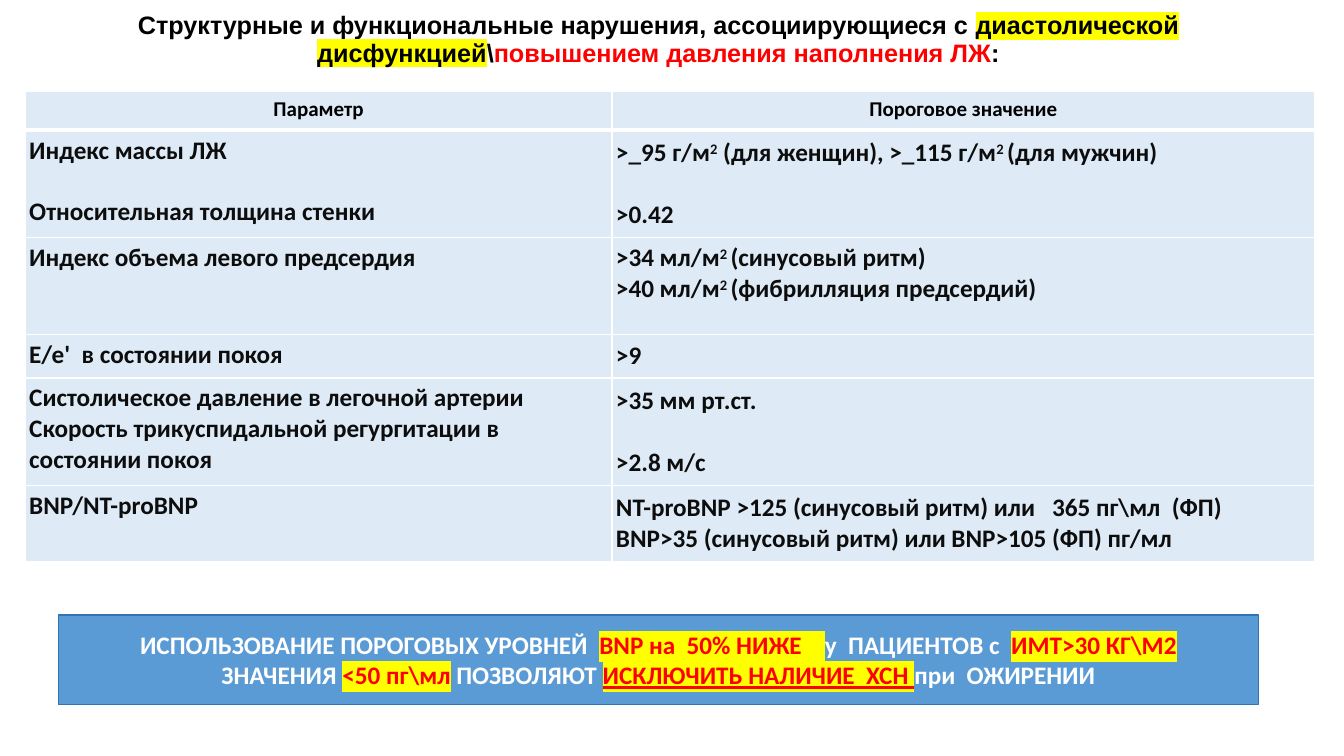
from lxml import etree
from pptx import Presentation
from pptx.dml.color import RGBColor
from pptx.enum.shapes import MSO_SHAPE
from pptx.enum.text import MSO_ANCHOR, PP_ALIGN
from pptx.oxml.ns import qn
from pptx.util import Inches, Pt

RECT = MSO_SHAPE.RECTANGLE
TOP, MID = MSO_ANCHOR.TOP, MSO_ANCHOR.MIDDLE
LEFT, CENTER = PP_ALIGN.LEFT, PP_ALIGN.CENTER
RED, WHITE, YELLOW = "FF0000", "FFFFFF", "FFFF00"
SUP = {"base": 30}
MARK = {"mark": YELLOW}
HOT = {"color": RED, "mark": YELLOW}


def tint(fill, color):
    fill.solid()
    fill.fore_color.rgb = RGBColor.from_string(color)


def write(para, text, size=18, face="Calibri", color="0D0D0D", mark=None, base=0, under=False):
    run = para.add_run()
    run.text = text
    font = run.font
    font.size, font.bold, font.name = Pt(size), True, face
    tint(font.fill, color)
    props = run._r.get_or_add_rPr()
    if under:
        font.underline = True
    if base:
        props.set("baseline", str(base * 1000))
    if mark:
        light = etree.Element(qn("a:highlight"))
        etree.SubElement(light, qn("a:srgbClr"), val=mark)
        props.find(qn("a:solidFill")).addnext(light)


deck = Presentation()
deck.slide_width, deck.slide_height = Inches(13.33), Inches(7.5)
slide = deck.slides.add_slide(deck.slide_layouts[6])

title = slide.shapes.add_textbox(Inches(0.78), Inches(0.11), Inches(11.5), Inches(0.8))
frame = title.text_frame
frame.word_wrap = True
frame.margin_top = Inches(0.02)
frame.vertical_anchor = TOP
para = frame.paragraphs[0]
para.alignment = CENTER
para.line_spacing = 0.9
for text, look in [
    ("Структурные и функциональные нарушения, ассоциирующиеся с ", {}),
    ("диастолической дисфункцией", MARK),
    ("\\", {}),
    ("повышением давления наполнения ЛЖ", {"color": RED}),
    (":", {}),
]:
    write(para, text, **{"face": "Arial", "color": "000000", **look})

rows = [
    ([[("Параметр", {})]], [[("Пороговое значение", {})]]),
    (
        [[("Индекс массы ЛЖ", {})], [("Относительная толщина стенки", {})]],
        [
            [
                (">_95 г/м", {}),
                ("2", SUP),
                (" (для женщин), >_115 г/м", {}),
                ("2 ", SUP),
                ("(для мужчин)", {}),
            ],
            [(">0.42", {})],
        ],
    ),
    (
        [[("Индекс объема левого предсердия", {})]],
        [
            [(">34 мл/м", {}), ("2 ", SUP), ("(синусовый ритм)", {})],
            [(">40 мл/м", {}), ("2 ", SUP), ("(фибрилляция предсердий)", {})],
        ],
    ),
    ([[("E/e'  в состоянии покоя", {})]], [[(">9", {})]]),
    (
        [
            [("Систолическое давление в легочной артерии", {})],
            [("Скорость трикуспидальной регургитации в состоянии покоя", {})],
        ],
        [[(">35 мм рт.ст.", {})], [(">2.8 м/с", {})]],
    ),
    (
        [[("BNP/NT-proBNP", {})]],
        [
            [("NT-proBNP >125 (синусовый ритм) или   365 пг\\мл  (ФП)", {})],
            [("BNP>35 (синусовый ритм) или BNP>105 (ФП) пг/мл", {})],
        ],
    ),
]
wide = [5.82, 6.97]
high = [0.38, 1.07, 0.96, 0.43, 1.07, 0.75]
gaps = {(1, 0), (1, 1), (4, 1)}
middle = {(1, 1), (3, 1), (4, 1), (5, 1)}

table = slide.shapes.add_table(
    len(high), len(wide), Inches(0.25), Inches(0.91), Inches(sum(wide)), Inches(sum(high))
).table
for col, width in zip(table.columns, wide):
    col.width = Inches(width)
for i, (row, height) in enumerate(zip(rows, high)):
    table.rows[i].height = Inches(height)
    for j, paras in enumerate(row):
        cell = table.cell(i, j)
        tint(cell.fill, "DEEBF7")
        cell.margin_left = cell.margin_right = Inches(0.04)
        cell.margin_top = cell.margin_bottom = Inches(0.05)
        cell.vertical_anchor = MID if (i, j) in middle else TOP
        for n, runs in enumerate(paras):
            para = cell.text_frame.add_paragraph() if n else cell.text_frame.paragraphs[0]
            para.alignment = LEFT if i else CENTER
            if n and (i, j) in gaps:
                para.space_before = Pt(22)
            for text, look in runs:
                write(para, text, size=18 if i else 15, color="0D0D0D" if i else "000000", **look)
        props = cell._tc.get_or_add_tcPr()
        for n, side in enumerate(["lnL", "lnR", "lnT", "lnB"]):
            thick = 3 if (i, side) in [(0, "lnB"), (1, "lnT")] else 1
            edge = etree.Element(qn("a:" + side), w=str(Pt(thick)))
            paint = etree.SubElement(edge, qn("a:solidFill"))
            etree.SubElement(paint, qn("a:srgbClr"), val=WHITE)
            props.insert(n, edge)

note = slide.shapes.add_shape(RECT, Inches(0.58), Inches(6.1), Inches(11.9), Inches(0.89))
note.shadow.inherit = False
tint(note.fill, "5B9BD5")
tint(note.line.fill, "2E75B6")
note.line.width = Pt(1)
frame = note.text_frame
frame.word_wrap = True
frame.vertical_anchor = MID
lines = [
    [
        ("ИСПОЛЬЗОВАНИЕ ПОРОГОВЫХ УРОВНЕЙ  ", {}),
        ("BNP на  50% НИЖЕ    ", HOT),
        ("у  ПАЦИЕНТОВ с  ", {}),
        ("ИМТ>30 КГ\\М2", HOT),
    ],
    [
        ("ЗНАЧЕНИЯ ", {}),
        ("<50 пг\\мл", HOT),
        (" ПОЗВОЛЯЮТ ", {}),
        ("ИСКЛЮЧИТЬ НАЛИЧИЕ  ХСН ", {**HOT, "under": True}),
        ("при  ОЖИРЕНИИ", {}),
    ],
]
for n, runs in enumerate(lines):
    para = frame.add_paragraph() if n else frame.paragraphs[0]
    para.alignment = CENTER
    for text, look in runs:
        write(para, text, **{"color": WHITE, **look})

deck.save("out.pptx")
